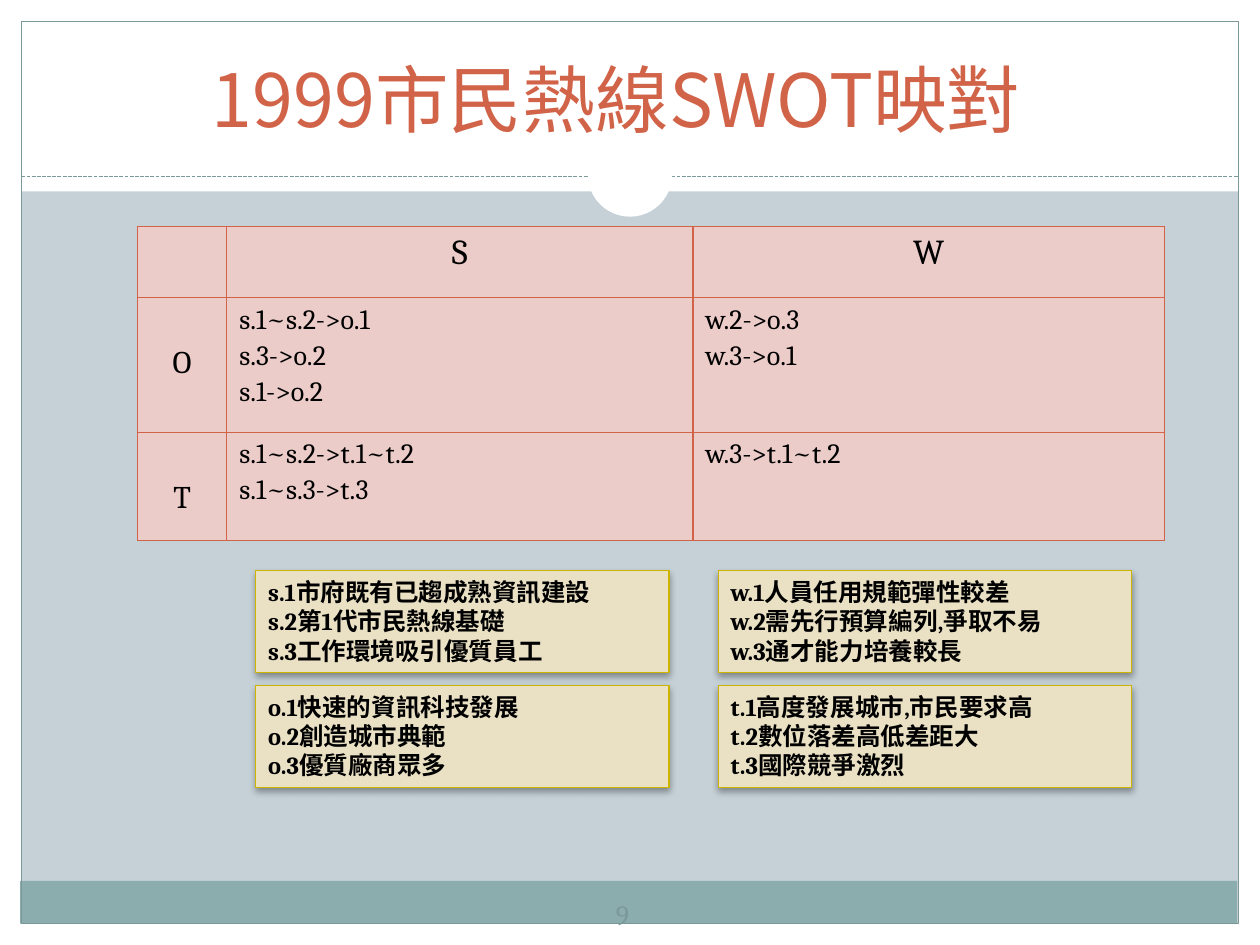
from lxml import etree
from pptx import Presentation
from pptx import util as u
from pptx.dml.color import RGBColor
from pptx.enum import dml, shapes, text
from pptx.oxml import parse_xml
from pptx.oxml.ns import nsdecls, qn

THEME = dict(
    white="FFFFFF", black="000000", back="C5D1D7", band="8CADAE", line="7C999A",
    accent="D16349", cell="EBCCC9", note="EAE1C5", note_line="CCB400",
    serif="Cambria", sans="Noto Sans CJK SC",
    title=42, head=20, side=18, body=16, small=14, rule=0.75)
color = {k: RGBColor.from_string(v) for k, v in THEME.items()
         if isinstance(v, str) and k not in ("serif", "sans")}

prs = Presentation()
prs.slide_width, prs.slide_height = u.Inches(10), u.Inches(7.5)
s = prs.slides.add_slide(prs.slide_layouts[5])
s.background.fill.solid()
s.background.fill.fore_color.rgb = color["back"]


def area(x, y, w, h):
    """Percent of slide width and height to lengths."""
    return [int(share * side / 100) for share, side in
            zip((x, y, w, h), (prs.slide_width, prs.slide_height) * 2)]


def write(tf, lines, size, ink="black", font="serif", align=None, gap=0, bold=False):
    for i, line in enumerate(lines):
        p = tf.paragraphs[0] if i == 0 else tf.add_paragraph()
        p.text = line
        p.alignment = align
        p.space_before = u.Pt(gap if i else 0)
        p.font.name, p.font.size = THEME[font], u.Pt(THEME[size])
        p.font.color.rgb, p.font.bold = color[ink], bold


CENTER = text.PP_ALIGN.CENTER
RECT, OVAL = shapes.MSO_SHAPE.RECTANGLE, shapes.MSO_SHAPE.OVAL

# Page edges, footer band, frame, dashed rule and notch
decor = [
    (RECT, (0, 97.73, 100, 2.27), "white"),
    (RECT, (0, 0, 100, 20.27), "white"),
    (RECT, (0, 0, 1.7, 100), "white"),
    (RECT, (98.3, 0, 1.7, 100), "white"),
    (RECT, (1.6, 93.2, 96.6, 4.53), "band"),
    (RECT, (1.7, 2.27, 96.6, 95.46), None),
    (None, (1.7, 18.67, 98.3, 18.67), "line"),
    (OVAL, (46.65, 14, 6.7, 8.93), "white"),
]
for kind, place, fill in decor:
    if kind is None:
        sp = s.shapes.add_connector(shapes.MSO_CONNECTOR.STRAIGHT, *area(*place))
        etree.SubElement(sp._element.spPr, qn("a:effectLst"))
        sp.line.dash_style = dml.MSO_LINE.SQUARE_DOT
    else:
        sp = s.shapes.add_shape(kind, *area(*place))
        sp.shadow.inherit = False
        if fill:
            sp.fill.solid()
            sp.fill.fore_color.rgb = color[fill]
            sp.line.fill.background()
            continue
        sp.fill.background()
    sp.line.color.rgb, sp.line.width = color["line"], u.Pt(THEME["rule"])

# Title, raised above the white header
title = s.shapes.title
title.left, title.top, title.width, title.height = area(3.9, 2.13, 90, 13.6)
s.shapes._spTree.append(title._element)
title.text_frame.auto_size = text.MSO_AUTO_SIZE.NONE
title.text_frame.vertical_anchor = text.MSO_ANCHOR.BOTTOM
write(title.text_frame, ["1999市民熱線SWOT映對"], "title", "accent", "sans", CENTER)

# Four legend notes on a two by two grid
notes = [
    ["s.1市府既有已趨成熟資訊建設", "s.2第1代市民熱線基礎", "s.3工作環境吸引優質員工"],
    ["w.1人員任用規範彈性較差", "w.2需先行預算編列,爭取不易", "w.3通才能力培養較長"],
    ["o.1快速的資訊科技發展", "o.2創造城市典範", "o.3優質廠商眾多"],
    ["t.1高度發展城市,市民要求高", "t.2數位落差高低差距大", "t.3國際競爭激烈"],
]
SHADOW = (f'<a:effectLst {nsdecls("a")}><a:outerShdw blurRad="{u.Pt(4)}" dist="{u.Pt(2)}" '
          f'dir="5400000" rotWithShape="0"><a:srgbClr val="{THEME["black"]}">'
          '<a:alpha val="35000"/></a:srgbClr></a:outerShdw></a:effectLst>')
for i, lines in enumerate(notes):
    row, col = divmod(i, 2)
    sp = s.shapes.add_shape(RECT, *area(20.3 + 36.7 * col, 60.4 + 12.13 * row, 32.8, 10.8))
    sp.fill.solid()
    sp.fill.fore_color.rgb = color["note"]
    sp.line.color.rgb, sp.line.width = color["note_line"], u.Pt(THEME["rule"])
    sp._element.spPr.append(parse_xml(SHADOW))
    sp.text_frame.vertical_anchor = text.MSO_ANCHOR.TOP
    write(sp.text_frame, lines, "small", align=text.PP_ALIGN.LEFT, bold=True)

# SWOT matching table
rows = [
    [[], ["S"], ["W"]],
    [["O"], ["s.1~s.2->o.1", "s.3->o.2", "s.1->o.2"], ["w.2->o.3", "w.3->o.1"]],
    [["T"], ["s.1~s.2->t.1~t.2", "s.1~s.3->t.3"], ["w.3->t.1~t.2"]],
]
col_shares, row_shares = (7.1, 37, 37.4), (7.5, 14.27, 11.47)
table = s.shapes.add_table(3, 3, *area(10.9, 24, sum(col_shares), sum(row_shares))).table
table.first_row = table.horz_banding = False
for column, share in zip(table.columns, col_shares):
    column.width = int(prs.slide_width * share / 100)
for line, share in zip(table.rows, row_shares):
    line.height = int(prs.slide_height * share / 100)
for r, row in enumerate(rows):
    for c, lines in enumerate(row):
        cell = table.cell(r, c)
        size = "head" if r == 0 else "side" if c == 0 else "body"
        write(cell.text_frame, lines, size, gap=2.2,
              align=CENTER if r == 0 or c == 0 else text.PP_ALIGN.LEFT)
        if r and c == 0:
            cell.margin_top = int(prs.slide_height * 0.05)
        for side in ("lnL", "lnR", "lnT", "lnB"):
            cell._tc.get_or_add_tcPr().append(parse_xml(
                f'<a:{side} {nsdecls("a")} w="{u.Pt(THEME["rule"])}"><a:solidFill>'
                f'<a:srgbClr val="{THEME["accent"]}"/></a:solidFill></a:{side}>'))
        cell.fill.solid()
        cell.fill.fore_color.rgb = color["cell"]

# Page number
tf = s.shapes.add_textbox(*area(46.9, 93.6, 5, 6.4)).text_frame
tf.word_wrap = True
tf.vertical_anchor = text.MSO_ANCHOR.MIDDLE
tf.margin_left = tf.margin_right = tf.margin_top = tf.margin_bottom = u.Inches(0.05)
write(tf, ["9"], "body", "line", align=CENTER)

prs.save("out.pptx")
